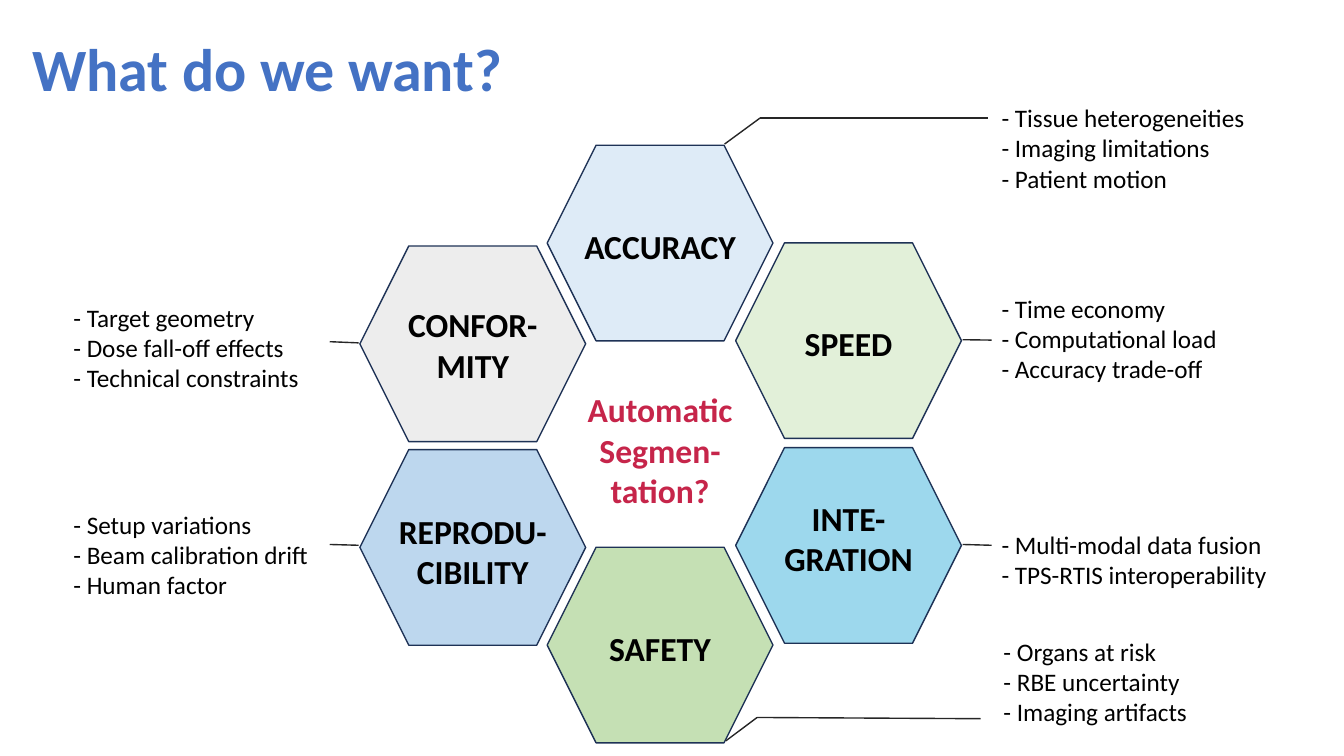
from itertools import pairwise

from lxml.etree import SubElement
from pptx import Presentation
from pptx.dml.color import RGBColor
from pptx.enum.shapes import MSO_CONNECTOR, MSO_SHAPE
from pptx.enum.text import MSO_ANCHOR as Anchor, PP_ALIGN as Align
from pptx.oxml.ns import qn
from pptx.util import Cm, Pt

FONT = "Calibri"
BLACK = RGBColor(0x00, 0x00, 0x00)
TITLE_BLUE = RGBColor(0x44, 0x72, 0xC4)
CRIMSON = RGBColor(0xC6, 0x25, 0x4A)
OUTLINE = RGBColor(0x1E, 0x32, 0x56)
LEADER = RGBColor(0x26, 0x26, 0x26)
PALE_BLUE = RGBColor(0xDE, 0xEB, 0xF7)
PALE_GREEN = RGBColor(0xE2, 0xF0, 0xD9)
CYAN = RGBColor(0x9D, 0xD8, 0xED)
GREEN = RGBColor(0xC5, 0xE0, 0xB4)
BLUE = RGBColor(0xBD, 0xD7, 0xEE)
GREY = RGBColor(0xED, 0xED, 0xED)

# Sizes and columns in centimetres
HEX_WIDTH, HEX_HEIGHT = 5.69, 4.93
LABEL_WIDTH = 5.23
LEFT, MIDDLE, RIGHT = 9.07, 13.79, 18.54
NOTE_LEFT, NOTE_RIGHT = 1.6, 24.99
NOTE_WIDTHS = {LEFT: 6.91, MIDDLE: 8.56, RIGHT: 8.56}

# Hexagon left and top, fill, label and its top, notes and their place, leader points
GOALS = [
    (MIDDLE, 3.66, PALE_BLUE, "ACCURACY", 5.56,
     "- Tissue heterogeneities\n- Imaging limitations\n- Patient motion",
     (NOTE_RIGHT, 2.46), [(18.26, 3.63), (19.16, 2.97), (24.89, 2.97)]),
    (RIGHT, 6.12, PALE_GREEN, "SPEED", 8.0,
     "- Time economy\n- Computational load\n- Accuracy trade-off",
     (NOTE_RIGHT, 7.26), [(24.26, 8.56), (24.99, 8.57)]),
    (RIGHT, 11.28, CYAN, "INTE-\nGRATION", 12.42,
     "- Multi-modal data fusion\n- TPS-RTIS interoperability",
     (NOTE_RIGHT, 13.21), [(24.26, 13.72), (24.99, 13.74)]),
    (MIDDLE, 13.79, GREEN, "SAFETY", 15.7,
     "- Organs at risk\n- RBE uncertainty\n- Imaging artifacts",
     (25.04, 15.9), [(18.29, 18.67), (19.08, 18.08), (24.71, 18.11)]),
    (LEFT, 11.33, BLUE, "REPRODU-\nCIBILITY", 12.75,
     "- Setup variations\n- Beam calibration drift\n- Human factor",
     (NOTE_LEFT, 12.7), [(8.31, 13.72), (9.04, 13.74)]),
    (LEFT, 6.2, GREY, "CONFOR-MITY", 7.54,
     "- Target geometry\n- Dose fall-off effects\n- Technical constraints",
     (NOTE_LEFT, 7.49), [(8.31, 8.61), (9.04, 8.64)]),
]


def format_text(frame, size, color, bold=False, align=Align.LEFT):
    for para in frame.paragraphs:
        para.alignment = align
        for span in para.runs:
            span.font.name = FONT
            span.font.size = Pt(size)
            span.font.bold = bold
            span.font.color.rgb = color


def add_title(page, text):
    title = page.shapes.title
    title.left, title.top, title.width, title.height = Cm(0.56), Cm(0), Cm(32.05), Cm(3.63)
    frame = title.text_frame
    frame.text = text
    frame.vertical_anchor = Anchor.MIDDLE
    frame.paragraphs[0].line_spacing = 0.9
    format_text(frame, 42.9, TITLE_BLUE, bold=True)


def add_text(page, left, top, width, height, text):
    box = page.shapes.add_textbox(Cm(left), Cm(top), Cm(width), Cm(height))
    frame = box.text_frame
    frame.word_wrap = True
    frame.text = text
    return frame


def add_label(page, hex_left, top, text, lines, color=BLACK):
    left = hex_left + (HEX_WIDTH - LABEL_WIDTH) / 2
    frame = add_text(page, left, top, LABEL_WIDTH, 0.25 + 1.03 * lines, text)
    format_text(frame, 24, color, bold=True, align=Align.CENTER)


def add_notes(page, left, top, width, text):
    lines = len(text.splitlines())
    frame = add_text(page, left, top, width, 0.26 + 0.77 * lines, text)
    format_text(frame, 18, BLACK)


def add_hexagon(page, left, top, fill):
    hexagon = page.shapes.add_shape(
        MSO_SHAPE.HEXAGON, Cm(left), Cm(top), Cm(HEX_WIDTH), Cm(HEX_HEIGHT))
    hexagon.shadow.inherit = False
    hexagon.fill.solid()
    hexagon.fill.fore_color.rgb = fill
    hexagon.line.color.rgb = OUTLINE
    hexagon.line.width = Pt(1)


def add_leader(page, points):
    for (x1, y1), (x2, y2) in pairwise(points):
        line = page.shapes.add_connector(
            MSO_CONNECTOR.STRAIGHT, Cm(x1), Cm(y1), Cm(x2), Cm(y2))
        line.line.color.rgb = LEADER
        line.line.width = Pt(1)
        SubElement(line._element.spPr, qn("a:effectLst"))


def main():
    deck = Presentation()
    deck.slide_width, deck.slide_height = Cm(33.87), Cm(19.05)
    page = deck.slides.add_slide(deck.slide_layouts[5])
    add_title(page, "What do we want?")

    # Ring of goals with their notes
    for left, top, fill, label, label_top, notes, (note_left, note_top), points in GOALS:
        add_hexagon(page, left, top, fill)
        add_label(page, left, label_top, label, 2 if "-" in label else 1)
        add_leader(page, points)
        add_notes(page, note_left, note_top, NOTE_WIDTHS[left], notes)

    # Question in the centre
    add_label(page, MIDDLE, 9.68, "Automatic Segmen-tation?", 3, CRIMSON)

    deck.save("out.pptx")


if __name__ == "__main__":
    main()
